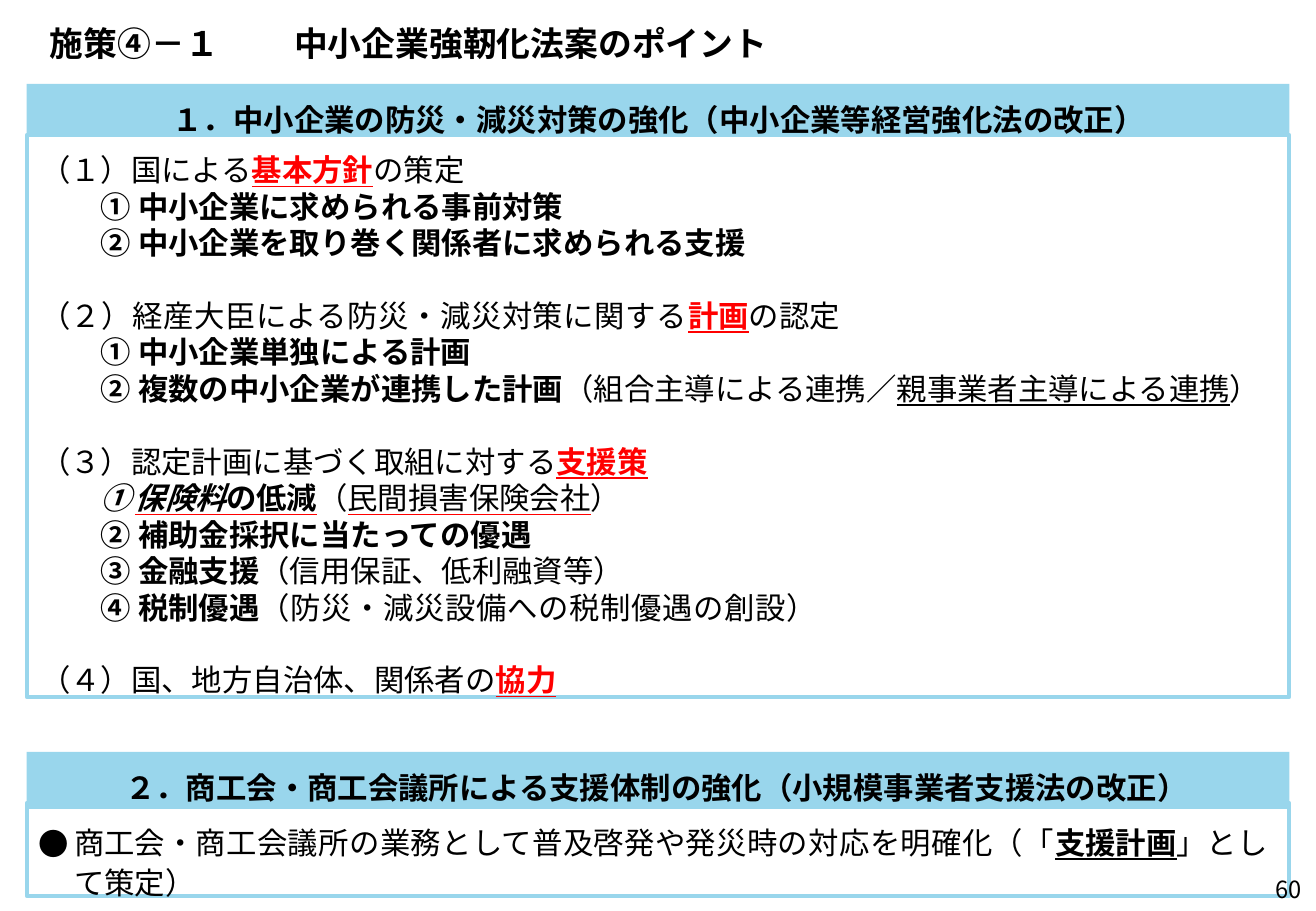
from lxml.etree import SubElement
from pptx import Presentation
from pptx.dml.color import RGBColor
from pptx.enum.lang import MSO_LANGUAGE_ID
from pptx.enum.shapes import MSO_SHAPE
from pptx.enum.text import MSO_ANCHOR, PP_ALIGN
from pptx.oxml.ns import qn
from pptx.util import Inches, Pt

FONT = "Noto Sans CJK JP"
SKY, RED, BLACK = "99D6EC", "FF0000", "000000"
LEFT, WIDTH = 0.22, 10.39
TEXT_LEFT, TEXT_WIDTH = 0.32, 10.2
LINE = 1.2  # line pitch as a multiple of the text size


def paint(fill, colour):
    fill.solid()
    fill.fore_color.rgb = RGBColor.from_string(colour)


def write(paragraph, runs, size=18, indent=0.0, before=0, pitch=LINE):
    """Add (text, marks, tracking) runs; marks: b, i, u, r = red text, m = red underline."""
    paragraph.alignment = PP_ALIGN.LEFT
    paragraph.line_spacing = Pt(round(size * pitch, 1))
    paragraph.space_before = Pt(before)
    paragraph._p.get_or_add_pPr().set("marL", str(Inches(indent)))
    for text, marks, tracking in runs:
        run = paragraph.add_run()
        run.text = text
        font = run.font
        font.size, font.name = Pt(size), FONT
        font.bold, font.italic, font.underline = "b" in marks, "i" in marks, "u" in marks
        font.language_id = MSO_LANGUAGE_ID.JAPANESE
        paint(font.fill, RED if "r" in marks else BLACK)
        properties = run._r.get_or_add_rPr()
        if tracking:
            properties.set("spc", str(round(tracking * 100)))
        east_asian = SubElement(properties, qn("a:ea"), typeface=FONT)
        if "m" in marks:
            underline = SubElement(properties, qn("a:uFill"))
            solid = SubElement(underline, qn("a:solidFill"))
            SubElement(solid, qn("a:srgbClr"), val=RED)
            properties.find(qn("a:latin")).addprevious(underline)


prs = Presentation()
prs.slide_width, prs.slide_height = Inches(10.83), Inches(7.5)
slide = prs.slides.add_slide(prs.slide_layouts[6])

# Section frames and their heading bands: (top, height, is band)
bands = []
for top, height, is_band in [(1.11, 4.63, False), (0.69, 0.41, True),
                             (6.61, 0.77, False), (6.19, 0.47, True)]:
    panel = slide.shapes.add_shape(MSO_SHAPE.RECTANGLE, Inches(LEFT), Inches(top),
                                   Inches(WIDTH), Inches(height))
    panel.shadow.inherit = False
    if is_band:
        paint(panel.fill, SKY)
        panel.line.fill.background()
        bands.append(panel)
    else:
        panel.fill.background()
        paint(panel.line.fill, SKY)
        panel.line.width = Pt(2.28)

# Text areas: (left, top, width, height, top inset)
areas = []
for left, top, width, height, inset in [
    (0.41, 0.15, 6.69, 0.35, 0.04),
    (TEXT_LEFT, 0.69, TEXT_WIDTH, 5.06, 0.14),
    (TEXT_LEFT, 6.72, TEXT_WIDTH, 0.69, 0.03),
    (10.5, 7.18, 0.26, 0.25, 0.02),
]:
    box = slide.shapes.add_textbox(Inches(left), Inches(top), Inches(width), Inches(height))
    areas.append((box.text_frame, inset))
areas.append((bands[1].text_frame, 0.14))
for frame, inset in areas:
    frame.margin_left = frame.margin_right = frame.margin_bottom = 0
    frame.margin_top = Inches(inset)
    frame.vertical_anchor = MSO_ANCHOR.TOP
    frame.word_wrap = True
title, measures, support, page_number, support_heading = [frame for frame, _ in areas]
page_number.word_wrap = False

title_line = title.paragraphs[0]
write(title_line, [("施策④－１\t中小企業強靭化法案のポイント", "b", 0)], size=20)
tabs = SubElement(title_line._p.pPr, qn("a:tabLst"))
SubElement(tabs, qn("a:tab"), pos=str(Inches(2.01)), algn="l")

# Section 1: (indent, space before, runs)
HEADING, ITEM, DETAIL = 1.1, 0.01, 0.51
GAP = 18 * LINE
measure_lines = [
    (HEADING, 0, [("１．中小企業の防災・減災対策の強化（中小企業等経営強化法の改正）", "b", 0)]),
    (ITEM, 8.4, [("（１）国による", "", 0), ("基本方針", "bur", 0), ("の策定", "", 0)]),
    (DETAIL, 0, [("① 中小企業に求められる事前対策", "b", 0)]),
    (DETAIL, 0, [("② 中小企業を取り巻く関係者に求められる支援", "b", 0)]),
    (ITEM, GAP, [("（２）経産大臣による防災・減災対策に関する", "", 0.3),
                 ("計画", "bur", 0), ("の認定", "", 0)]),
    (DETAIL, 0, [("① 中小企業単独による計画", "b", 0)]),
    (DETAIL, 0, [("② 複数の中小企業が連携した計画", "b", 0), ("（組合主導による連携／", "", 0),
                 ("親事業者主導による連携", "u", 0), ("）", "", 0)]),
    (ITEM, GAP, [("（３）認定計画に基づく取組に対する", "", 0), ("支援策", "bur", 0)]),
    (DETAIL, 0, [("①", "bi", 2.2), ("保険料", "bium", 0), ("の低減", "bum", 0),
                 ("（", "", 0), ("民間損害保険会社", "um", 0), ("）", "", 0)]),
    (DETAIL, 0, [("② 補助金採択に当たっての優遇", "b", 0)]),
    (DETAIL, 0, [("③ 金融支援", "b", 0), ("（信用保証、低利融資等）", "", 0)]),
    (DETAIL, 0, [("④ 税制優遇", "b", 0), ("（防災・減災設備への税制優遇の創設）", "", 0.4)]),
    (ITEM, GAP, [("（４）国、地方自治体、関係者の", "", 0), ("協力", "bur", 0)]),
]
for number, (indent, before, runs) in enumerate(measure_lines):
    line = measures.add_paragraph() if number else measures.paragraphs[0]
    write(line, runs, indent=indent, before=before)

# Section 2
write(support_heading.paragraphs[0],
      [("２．商工会・商工会議所による支援体制の強化（小規模事業者支援法の改正）", "b", 0)],
      indent=0.81)
support_line = support.paragraphs[0]
write(support_line, [("商工会", "", 0),
                     ("・商工会議所の業務として普及啓発や発災時の対応を明確化（「", "", 0.2),
                     ("支援計画", "bu", 0), ("」として策定）", "", 0)],
      indent=0.29, pitch=LINE * 1.11)
support_line._p.pPr.set("indent", str(-Inches(0.29)))
SubElement(support_line._p.pPr, qn("a:buFont"), typeface=FONT)
SubElement(support_line._p.pPr, qn("a:buChar"), char="●")

write(page_number.paragraphs[0], [("60", "", 0)], size=14)

prs.save("out.pptx")
